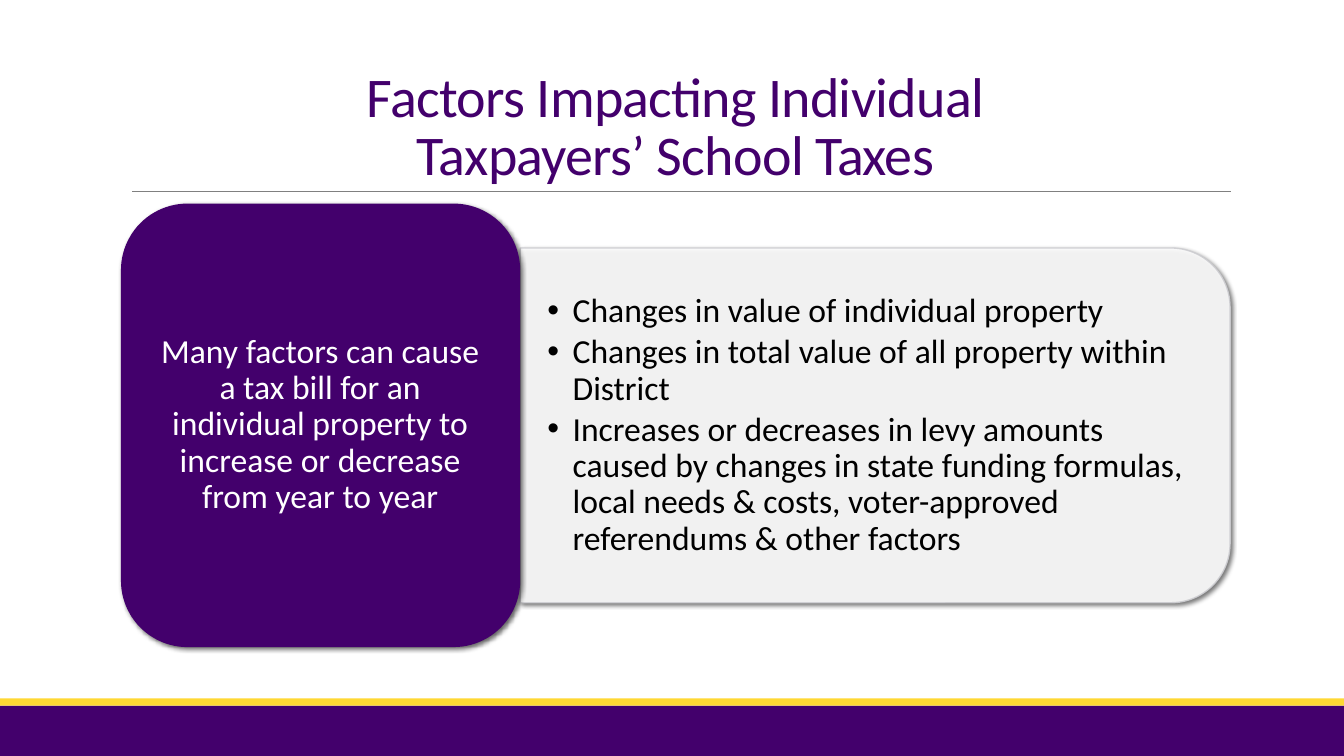
from lxml import etree
from pptx import Presentation
from pptx import util as u
from pptx.dml.color import RGBColor
from pptx.enum import shapes, text
from pptx.oxml import ns

PURPLE = RGBColor(0x43, 0x00, 0x6C)
GOLD = RGBColor(0xFF, 0xD8, 0x33)
GRAY = RGBColor(0x80, 0x80, 0x80)
EDGE = RGBColor(0xCD, 0xCD, 0xD1)
WHITE = RGBColor(0xFF, 0xFF, 0xFF)
BLACK = RGBColor(0x00, 0x00, 0x00)

TITLE = "Factors Impacting Individual\vTaxpayers’ School Taxes"
CAUSE = ("Many factors can cause a tax bill for an individual property "
         "to increase or decrease from year to year")
FACTORS = [
    "Changes in value of individual property",
    "Changes in total value of all property within District",
    "Increases or decreases in levy amounts caused by changes in state funding "
    "formulas, local needs & costs, voter-approved referendums & other factors",
]


def inches(*values):
    return [u.Inches(value) for value in values]


def set_all(target, formats):
    for name, value in formats.items():
        setattr(target, name, value)


def add_child(parent, tag, **attributes):
    child = etree.SubElement(parent, ns.qn(tag))
    for name, value in attributes.items():
        child.set(name, str(value))
    return child


def add_block(page, kind, place, color):
    block = page.shapes.add_shape(kind, *inches(*place))
    block.shadow.inherit = False
    block.fill.solid()
    block.fill.fore_color.rgb = color
    block.line.fill.background()
    return block


def add_shadow(block):
    effects = block.element.spPr.find(ns.qn("a:effectLst"))
    shadow = add_child(effects, "a:outerShdw", blurRad=u.Pt(3), dist=u.Pt(2),
                       dir=45 * 60000, algn="ctr", rotWithShape=0)
    color = add_child(shadow, "a:srgbClr", val=BLACK)
    add_child(color, "a:alpha", val=60000)


def fade(block, percent):
    """Set the opacity of the fill and the outline."""
    for color in block.element.spPr.iter(ns.qn("a:srgbClr")):
        add_child(color, "a:alpha", val=percent * 1000)


def add_rule(page, left, right, top):
    rule = page.shapes.add_connector(
        shapes.MSO_CONNECTOR.STRAIGHT, *inches(left, top, right, top))
    rule.line.color.rgb = GRAY
    rule.line.width = u.Pt(0.5)
    add_child(rule.element.spPr, "a:effectLst")


def write(frame, lines, size, color, para_format, anchor):
    set_all(frame, {"word_wrap": True, "vertical_anchor": anchor})
    for index, line in enumerate(lines):
        para = frame.add_paragraph() if index else frame.paragraphs[0]
        para.text = line
        set_all(para, para_format)
        for span in para.runs:
            set_all(span.font, {"name": "Calibri", "size": u.Pt(size)})
            span.font.color.rgb = color


def add_text(page, place, lines, color, para_format):
    box = page.shapes.add_textbox(*inches(*place))
    write(box.text_frame, lines, 24, color, {"line_spacing": 0.9, **para_format},
          text.MSO_ANCHOR.MIDDLE)
    return box.text_frame


def add_bullets(frame):
    for para in frame.paragraphs:
        settings = para._p.get_or_add_pPr()
        settings.set("marL", str(u.Inches(0.25)))
        settings.set("indent", str(u.Inches(-0.25)))
        add_child(settings, "a:buFont", typeface="Arial")
        add_child(settings, "a:buChar", char="•")


def set_title(page):
    title = page.shapes.title
    left, top, width, height = inches(1.2, 0.31, 11, 1.59)
    set_all(title, {"left": left, "top": top, "width": width, "height": height})
    write(title.text_frame, [TITLE], 40, PURPLE,
          {"alignment": text.PP_ALIGN.CENTER, "line_spacing": 0.85},
          text.MSO_ANCHOR.BOTTOM)
    for span in title.text_frame.paragraphs[0].runs:
        span.font._element.set("spc", "-50")


def main():
    deck = Presentation()
    deck.slide_width, deck.slide_height = inches(13.33, 7.5)
    page = deck.slides.add_slide(deck.slide_layouts[5])
    preset = shapes.MSO_SHAPE

    # Footer bands, title and rule
    add_block(page, preset.RECTANGLE, (0, 7, 13.33, 0.5), PURPLE)
    add_block(page, preset.RECTANGLE, (0, 6.93, 13.33, 0.07), GOLD)
    set_title(page)
    add_rule(page, 1.31, 12.21, 1.9)

    # Panel listing the factors
    panel = add_block(page, preset.ROUND_2_SAME_RECTANGLE,
                      (6.92, 0.7, 3.52, 7.04), WHITE)
    panel.rotation = 90
    panel.line.color.rgb = EDGE
    panel.line.width = u.Pt(1)
    fade(panel, 90)
    add_shadow(panel)
    frame = add_text(page, (5.16, 2.63, 6.87, 3.18), FACTORS, BLACK,
                     {"space_after": u.Pt(3.6)})
    side, edge = inches(0.27, 0.14)
    set_all(frame, {"margin_left": side, "margin_right": side,
                    "margin_top": edge, "margin_bottom": edge})
    add_bullets(frame)

    # Card with the main statement
    card = add_block(page, preset.ROUNDED_RECTANGLE, (1.2, 2.02, 3.96, 4.4), PURPLE)
    add_shadow(card)
    add_text(page, (1.39, 2.21, 3.57, 4.01), [CAUSE], WHITE,
             {"alignment": text.PP_ALIGN.CENTER})

    deck.save("out.pptx")


if __name__ == "__main__":
    main()
